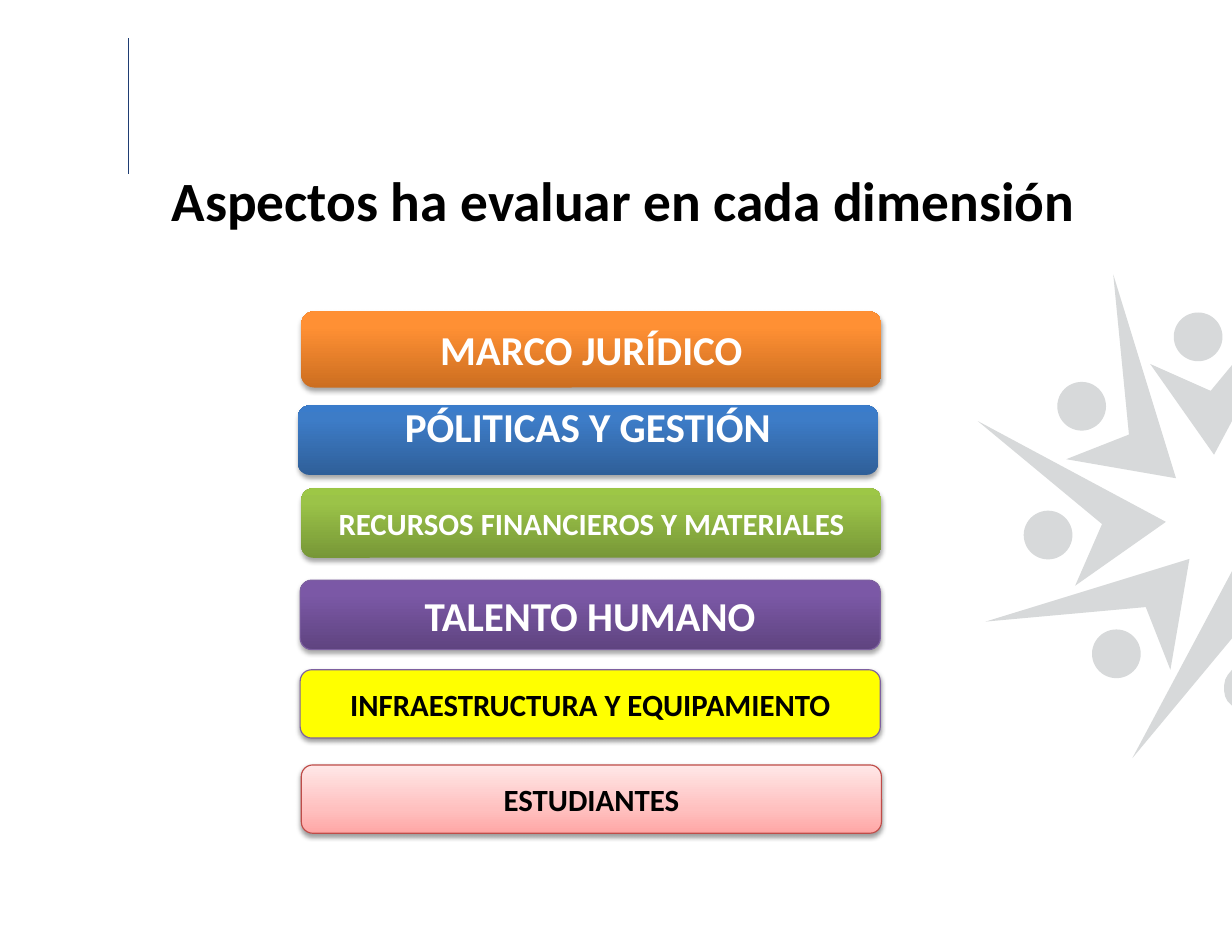
from dataclasses import dataclass
from typing import Optional

from lxml.etree import SubElement
from pptx import Presentation
from pptx.dml.color import RGBColor
from pptx.enum.shapes import MSO_CONNECTOR, MSO_SHAPE
from pptx.enum.text import MSO_ANCHOR, MSO_AUTO_SIZE, PP_ALIGN
from pptx.oxml.ns import qn
from pptx.util import Inches, Pt

FONT = "Calibri"
HEX = {
    "black": "000000", "white": "FFFFFF", "grey": "D7D9DA", "navy": "1F3D73",
    "yellow": "FFFF00", "violet": "7D60A0", "red": "BF4C48",
}
# Gradient stops run from the bottom edge to the top edge.
FADES = {
    "orange": [(0, "CC6E20"), (80, "FF9034"), (100, "FF9136")],
    "blue": [(0, "2F5F99"), (80, "3D7CC7"), (100, "3A7CCB")],
    "green": [(0, "779737"), (80, "9BC348"), (100, "9DC746")],
    "purple": [(0, "5F4480"), (80, "7B58A6"), (100, "7C57A8")],
    "pink": [(0, "FFA6A5"), (35, "FFC0BF"), (100, "FFE7E7")],
}


@dataclass
class Bar:
    text: str
    left: float
    top: float
    high: float
    fill: str
    size: float = 26.4
    ink: str = "white"
    line: Optional[str] = None
    pad: tuple = (0.05, 0.05)
    shade: tuple = (35, 1.8)


LIGHT = (38, 1.6)
BARS = [
    Bar("MARCO JURÍDICO", 2.69, 2.78, 0.68, "orange"),
    Bar("PÓLITICAS Y GESTIÓN", 2.66, 3.62, 0.62, "blue", pad=(0, 0.25)),
    Bar("RECURSOS FINANCIEROS Y MATERIALES", 2.69, 4.36, 0.62, "green", 19.8),
    Bar("TALENTO HUMANO", 2.68, 5.18, 0.62, "purple", line="violet"),
    Bar("INFRAESTRUCTURA Y EQUIPAMIENTO", 2.68, 5.98, 0.61, "yellow", 19.8,
        "black", "violet", shade=LIGHT),
    Bar("ESTUDIANTES", 2.69, 6.83, 0.61, "pink", 19.8, "black", "red",
        shade=LIGHT),
]

BODIES = [
    [(10.27, 3.25), (10.84, 4.06), (11, 3.76), (11, 3.26), (10.81, 3.49)],
    [(11, 5.1), (10.11, 6.77), (11, 5.7)],
    [(9.94, 2.45), (10.08, 3.88), (9.52, 4.1), (10.5, 4.27)],
    [(10.62, 4.99), (8.8, 5.55), (10.23, 5.42), (10.45, 5.98)],
    [(8.73, 3.76), (9.84, 4.68), (9.6, 5.23), (10.41, 4.66)],
]
# The last head is cut by the slide's right edge.
CUT = [(11, 5.98), (10.96, 6.03), (10.94, 6.07), (10.93, 6.12), (10.93, 6.17),
       (10.94, 6.22), (10.96, 6.26), (11, 6.3)]
HEADS = [(10.48, 2.79), (9.44, 3.41), (9.75, 5.62), (9.14, 4.56)]
HEAD = 0.435


def tint(name: str) -> RGBColor:
    return RGBColor.from_string(HEX[name])


def paint(shape) -> None:
    """Give a flat grey fill with no line or shadow."""
    shape.shadow.inherit = False
    shape.fill.solid()
    shape.fill.fore_color.rgb = tint("grey")
    shape.line.fill.background()


def draw_figures(slide) -> None:
    for points in BODIES + [CUT]:
        first, *rest = [(Inches(x), Inches(y)) for x, y in points]
        build = slide.shapes.build_freeform(*first)
        build.add_line_segments(rest, close=True)
        paint(build.convert_to_shape())
    for left, top in HEADS:
        paint(slide.shapes.add_shape(
            MSO_SHAPE.OVAL, Inches(left), Inches(top),
            Inches(HEAD), Inches(HEAD)))


def draw_rule(slide) -> None:
    rule = slide.shapes.add_connector(
        MSO_CONNECTOR.STRAIGHT, Inches(1.15), Inches(0.34),
        Inches(1.15), Inches(1.55))
    rule.line.color.rgb = tint("navy")
    rule.line.width = Pt(0.46)
    SubElement(rule._element.spPr, qn("a:effectLst"))


def write(frame, text: str, size: float, ink: str) -> None:
    frame.word_wrap = True
    para = frame.paragraphs[0]
    para.alignment = PP_ALIGN.CENTER
    run = para.add_run()
    run.text = text
    run.font.name = FONT
    run.font.size = Pt(size)
    run.font.bold = True
    run.font.color.rgb = tint(ink)


def fade(shape, stops: list) -> None:
    shape.fill.gradient()
    shape.fill.gradient_angle = 90
    group = shape._element.spPr.find(qn("a:gradFill")).find(qn("a:gsLst"))
    for old in list(group):
        group.remove(old)
    for spot, code in stops:
        stop = SubElement(group, qn("a:gs"), pos=str(spot * 1000))
        SubElement(stop, qn("a:srgbClr"), val=code)


def cast(shape, alpha: int, drop: float) -> None:
    """Add a soft shadow below the shape."""
    shape.shadow.inherit = False
    effects = shape._element.spPr.find(qn("a:effectLst"))
    outer = SubElement(
        effects, qn("a:outerShdw"), blurRad=str(Pt(3.1)),
        dist=str(Pt(drop)), dir="5400000", rotWithShape="0")
    color = SubElement(outer, qn("a:srgbClr"), val=HEX["black"])
    SubElement(color, qn("a:alpha"), val=str(alpha * 1000))


def draw_bar(slide, bar: Bar) -> None:
    shape = slide.shapes.add_shape(
        MSO_SHAPE.ROUNDED_RECTANGLE, Inches(bar.left), Inches(bar.top),
        Inches(5.18), Inches(bar.high))
    if bar.fill in FADES:
        fade(shape, FADES[bar.fill])
    else:
        shape.fill.solid()
        shape.fill.fore_color.rgb = tint(bar.fill)
    if bar.line:
        shape.line.color.rgb = tint(bar.line)
        shape.line.width = Pt(0.75)
    else:
        shape.line.fill.background()
    cast(shape, *bar.shade)
    frame = shape.text_frame
    frame.vertical_anchor = MSO_ANCHOR.MIDDLE
    frame.margin_top, frame.margin_bottom = map(Inches, bar.pad)
    write(frame, bar.text, bar.size, bar.ink)


def draw_title(slide) -> None:
    title = slide.shapes.title
    title.left, title.top = Inches(1.5), Inches(1.48)
    title.width, title.height = Inches(8.25), Inches(0.6)
    frame = title.text_frame
    frame.auto_size = MSO_AUTO_SIZE.NONE
    frame.vertical_anchor = MSO_ANCHOR.BOTTOM
    frame.margin_left = frame.margin_right = 0
    frame.margin_top = frame.margin_bottom = 0
    write(frame, "Aspectos ha evaluar en cada dimensión ", 35.6, "black")


def main() -> None:
    deck = Presentation()
    deck.slide_width, deck.slide_height = Inches(11), Inches(8.5)
    slide = deck.slides.add_slide(deck.slide_layouts[5])
    draw_figures(slide)
    draw_rule(slide)
    draw_title(slide)
    for bar in BARS:
        draw_bar(slide, bar)
    deck.save("out.pptx")


if __name__ == "__main__":
    main()
